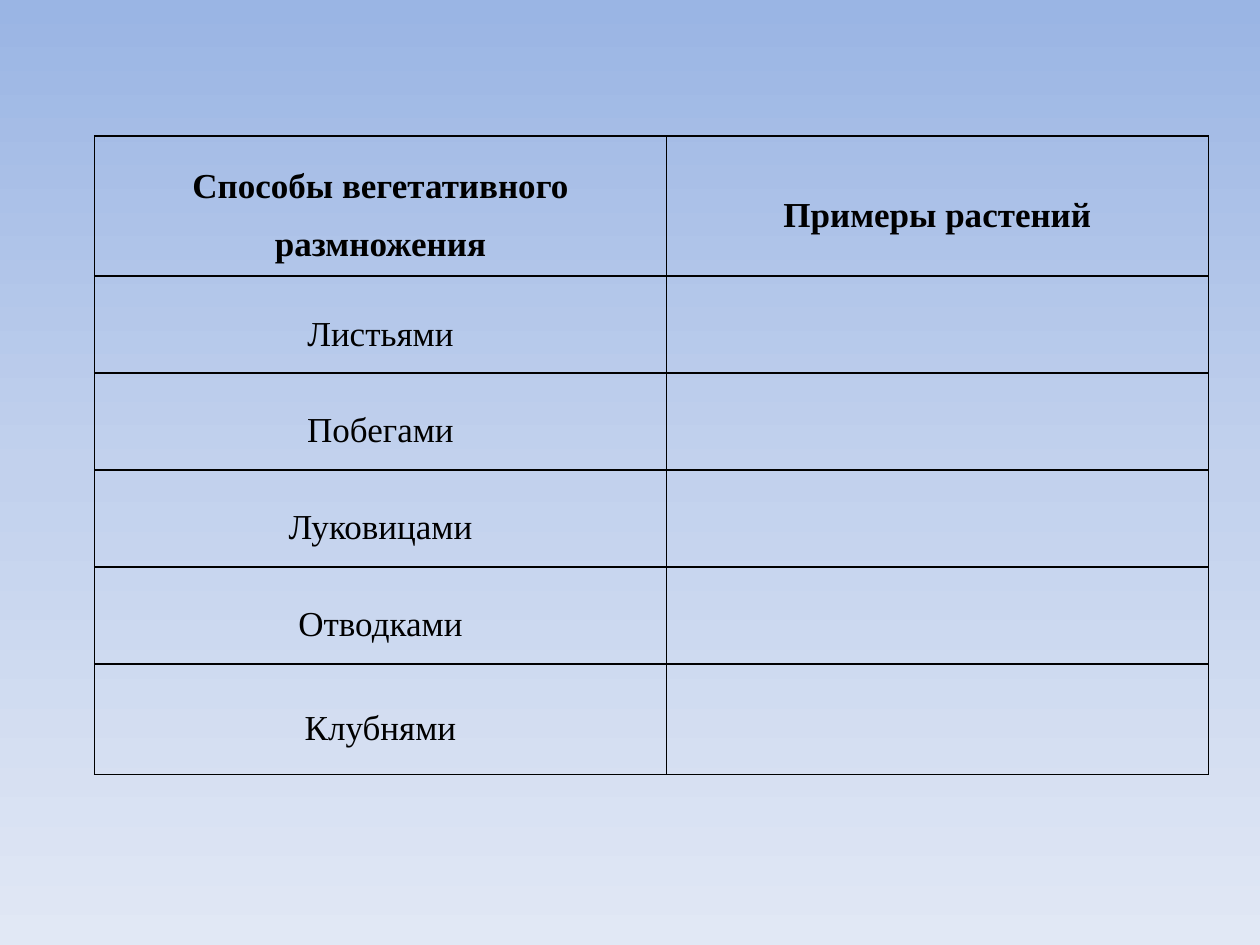
from copy import deepcopy
from dataclasses import dataclass

from lxml.etree import SubElement
from pptx import Presentation
from pptx.dml.color import RGBColor
from pptx.enum.text import MSO_ANCHOR, PP_ALIGN
from pptx.oxml.ns import qn
from pptx.util import Inches, Pt


@dataclass(frozen=True)
class Theme:
    """Colours and type of the slide."""
    font: str = "Times New Roman"
    size: int = 20
    ink: str = "000000"
    border: int = 1
    backdrop: tuple = ((0, "9AB5E4"), (0.5, "C2D1ED"), (1, "E1E8F5"))


THEME = Theme()
HEADINGS = ("Способы вегетативного размножения", "Примеры растений")
METHODS = ("Листьями", "Побегами", "Луковицами", "Отводками", "Клубнями")
COLUMN_WIDTHS = (4.54, 4.3)
ROW_HEIGHTS = (1.11, 0.77, 0.77, 0.77, 0.77, 0.88)


def paint_backdrop(slide):
    """Fill the background with the vertical gradient."""
    fill = slide.background.fill
    fill.gradient()
    fill.gradient_angle = 270
    stop_list = slide.element.find(".//" + qn("a:gsLst"))
    stop_list.insert(1, deepcopy(stop_list[0]))
    for stop, (position, colour) in zip(fill.gradient_stops, THEME.backdrop):
        stop.position = position
        stop.color.rgb = RGBColor.from_string(colour)


def draw_borders(cell):
    """Draw a thin line on all four sides of a cell."""
    properties = cell._tc.get_or_add_tcPr()
    for side in ("L", "R", "T", "B"):
        line = SubElement(properties, qn(f"a:ln{side}"), w=str(Pt(THEME.border)))
        solid = SubElement(line, qn("a:solidFill"))
        SubElement(solid, qn("a:srgbClr"), val=THEME.ink)


def style_cell(cell):
    """Give a cell its borders, margins and clear fill."""
    draw_borders(cell)
    cell.fill.background()
    cell.vertical_anchor = MSO_ANCHOR.MIDDLE
    cell.margin_left = cell.margin_right = Inches(0.07)
    cell.margin_top = cell.margin_bottom = 0


def write_cell(cell, wording, bold):
    """Write centred wording in a cell."""
    cell.text = wording
    paragraph = cell.text_frame.paragraphs[0]
    paragraph.alignment = PP_ALIGN.CENTER
    paragraph.line_spacing = 1.5
    font = paragraph.font
    font.name = THEME.font
    font.size = Pt(THEME.size)
    font.bold = bold
    font.color.rgb = RGBColor.from_string(THEME.ink)


def add_methods_table(slide):
    """Add the table of propagation methods and plant examples."""
    table = slide.shapes.add_table(
        len(ROW_HEIGHTS), len(COLUMN_WIDTHS), Inches(0.75), Inches(1.08),
        Inches(sum(COLUMN_WIDTHS)), Inches(sum(ROW_HEIGHTS)),
    ).table
    table.first_row = table.horz_banding = False
    for column, width in zip(table.columns, COLUMN_WIDTHS):
        column.width = Inches(width)
    for row, height in zip(table.rows, ROW_HEIGHTS):
        row.height = Inches(height)
    for cell in table.iter_cells():
        style_cell(cell)
    for index, heading in enumerate(HEADINGS):
        write_cell(table.cell(0, index), heading, True)
    for index, method in enumerate(METHODS, start=1):
        write_cell(table.cell(index, 0), method, False)


def main():
    """Build and save the slide."""
    presentation = Presentation()
    presentation.slide_width = Inches(10)
    presentation.slide_height = Inches(7.5)
    slide = presentation.slides.add_slide(presentation.slide_layouts[6])
    paint_backdrop(slide)
    add_methods_table(slide)
    presentation.save("out.pptx")


if __name__ == "__main__":
    main()
